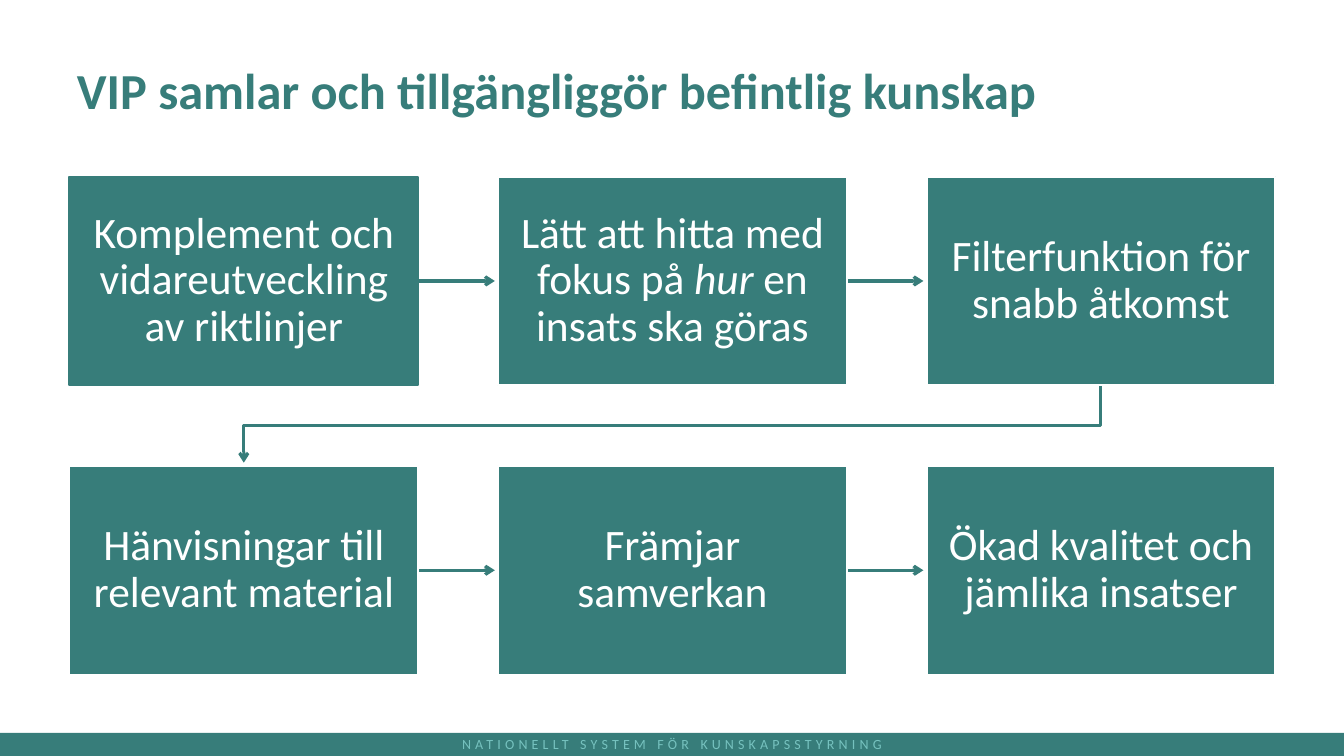
"""Build a slide with six process steps joined by arrows."""
from dataclasses import dataclass

from lxml.etree import SubElement
from pptx import Presentation
from pptx.dml.color import RGBColor
from pptx.enum.shapes import MSO_CONNECTOR as Connector, MSO_SHAPE as Preset
from pptx.enum.text import MSO_ANCHOR as Anchor, PP_ALIGN as Align
from pptx.oxml.ns import qn
from pptx.shapes.base import BaseShape
from pptx.slide import Slide
from pptx.text.text import TextFrame
from pptx.util import Cm, Pt

COLORS = {"teal": "377D7A", "mint": "76C2BF", "white": "FFFFFF"}
FONT = "Calibri"
SLIDE_WIDTH, SLIDE_HEIGHT = 33.87, 19.05
BOX_WIDTH, BOX_HEIGHT = 8.79, 5.26
FIRST_LEFT, FIRST_TOP = 1.75, 4.45
COLUMN_STEP, ROW_STEP = 10.8, 7.29
COLUMNS = 3
ARROW_LENGTH = 1.93
ELBOW_START, ELBOW_BEND, ELBOW_END = 9.73, 10.72, 11.66


@dataclass(frozen=True)
class Step:
    """A process box whose phrases alternate between upright and italic."""
    column: int
    row: int
    phrases: tuple[str, ...]
    border: str = "white"

    @property
    def left(self) -> float:
        return FIRST_LEFT + self.column * COLUMN_STEP

    @property
    def top(self) -> float:
        return FIRST_TOP + self.row * ROW_STEP

    @property
    def center(self) -> float:
        return self.left + BOX_WIDTH / 2

    @property
    def middle(self) -> float:
        return self.top + BOX_HEIGHT / 2


STEPS = (
    Step(0, 0, ("Komplement och vidareutveckling av riktlinjer",), "teal"),
    Step(1, 0, ("Lätt att hitta med fokus på ", "hur ", "en insats ska göras")),
    Step(2, 0, ("Filterfunktion för snabb åtkomst",)),
    Step(0, 1, ("Hänvisningar till relevant material",)),
    Step(1, 1, ("Främjar samverkan",)),
    Step(2, 1, ("Ökad kvalitet och jämlika insatser",)),
)


def color(name: str) -> RGBColor:
    """Return the named colour."""
    return RGBColor.from_string(COLORS[name])


def format_text(frame: TextFrame, size: float, color_name: str,
                align: Align, spacing: float = 1.0) -> None:
    """Format the only paragraph of a frame and all its runs."""
    frame.word_wrap = True
    paragraph = frame.paragraphs[0]
    paragraph.alignment = align
    paragraph.line_spacing = spacing
    for run in paragraph.runs:
        run.font.name = FONT
        run.font.size = Pt(size)
        run.font.color.rgb = color(color_name)


def add_rectangle(slide: Slide, left: float, top: float,
                  width: float, height: float) -> BaseShape:
    """Add a teal rectangle without a line."""
    shape = slide.shapes.add_shape(
        Preset.RECTANGLE, Cm(left), Cm(top), Cm(width), Cm(height))
    shape.shadow.inherit = False
    shape.fill.solid()
    shape.fill.fore_color.rgb = color("teal")
    shape.line.fill.background()
    return shape


def add_footer(slide: Slide) -> None:
    """Add the bottom band and its letter-spaced caption."""
    add_rectangle(slide, 0, 18.47, SLIDE_WIDTH, 0.58)
    box = slide.shapes.add_textbox(Cm(8.47), Cm(18.42), Cm(16.93), Cm(0.68))
    box.text_frame.text = "NATIONELLT SYSTEM FÖR KUNSKAPSSTYRNING"
    format_text(box.text_frame, 10, "mint", Align.CENTER)
    run = box.text_frame.paragraphs[0].runs[0]
    run._r.get_or_add_rPr().set("spc", "300")


def add_title(slide: Slide) -> None:
    """Add the slide title."""
    box = slide.shapes.add_textbox(Cm(1.69), Cm(0.76), Cm(30.48), Cm(3.18))
    frame = box.text_frame
    frame.text = "VIP samlar och tillgängliggör befintlig kunskap"
    frame.vertical_anchor = Anchor.MIDDLE
    format_text(frame, 36, "teal", Align.LEFT, 0.9)
    frame.paragraphs[0].runs[0].font.bold = True


def style_arrow(shape: BaseShape) -> None:
    """Give a line its colour, width and arrowhead, and no shadow."""
    shape.line.color.rgb = color("teal")
    shape.line.width = Pt(2.25)
    properties = shape._element.spPr
    SubElement(properties.find(qn("a:ln")), qn("a:tailEnd"), type="arrow")
    SubElement(properties, qn("a:effectLst"))


def add_straight_arrow(slide: Slide, step: Step) -> None:
    """Add an arrow from a step to its right neighbour."""
    start = step.left + BOX_WIDTH
    style_arrow(slide.shapes.add_connector(
        Connector.STRAIGHT, Cm(start), Cm(step.middle),
        Cm(start + ARROW_LENGTH), Cm(step.middle)))


def add_elbow_arrow(slide: Slide, source: Step, target: Step) -> None:
    """Add the bent arrow from the end of one row to the start of the next."""
    points = [(Cm(x), Cm(y)) for x, y in (
        (source.center, ELBOW_START), (source.center, ELBOW_BEND),
        (target.center, ELBOW_BEND), (target.center, ELBOW_END))]
    builder = slide.shapes.build_freeform(*points[0])
    builder.add_line_segments(points[1:], close=False)
    shape = builder.convert_to_shape()
    shape.fill.background()
    style_arrow(shape)


def add_step(slide: Slide, step: Step) -> None:
    """Add a process box with its text."""
    shape = add_rectangle(slide, step.left, step.top, BOX_WIDTH, BOX_HEIGHT)
    shape.line.color.rgb = color(step.border)
    shape.line.width = Pt(1.5)
    frame = shape.text_frame
    frame.margin_left = frame.margin_right = Cm(0.43)
    frame.margin_top = frame.margin_bottom = Cm(0.46)
    frame.vertical_anchor = Anchor.MIDDLE
    for index, phrase in enumerate(step.phrases):
        run = frame.paragraphs[0].add_run()
        run.text = phrase
        run.font.italic = index % 2 == 1
    format_text(frame, 31, "white", Align.CENTER, 0.9)


def main() -> None:
    """Build and save the presentation."""
    presentation = Presentation()
    presentation.slide_width = Cm(SLIDE_WIDTH)
    presentation.slide_height = Cm(SLIDE_HEIGHT)
    slide = presentation.slides.add_slide(presentation.slide_layouts[6])
    add_footer(slide)
    add_title(slide)
    for step in STEPS:
        if step.column < COLUMNS - 1:
            add_straight_arrow(slide, step)
    add_elbow_arrow(slide, STEPS[COLUMNS - 1], STEPS[COLUMNS])
    for step in STEPS:
        add_step(slide, step)
    presentation.save("out.pptx")


if __name__ == "__main__":
    main()
